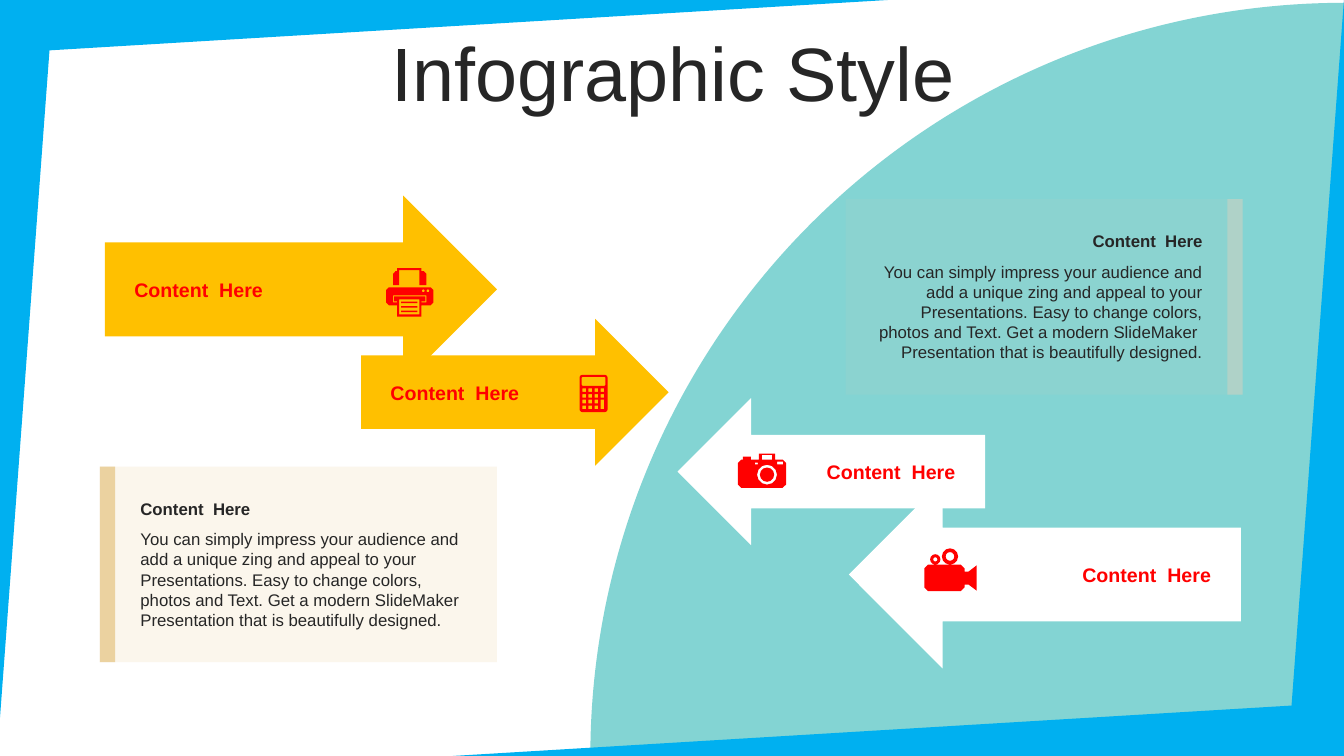
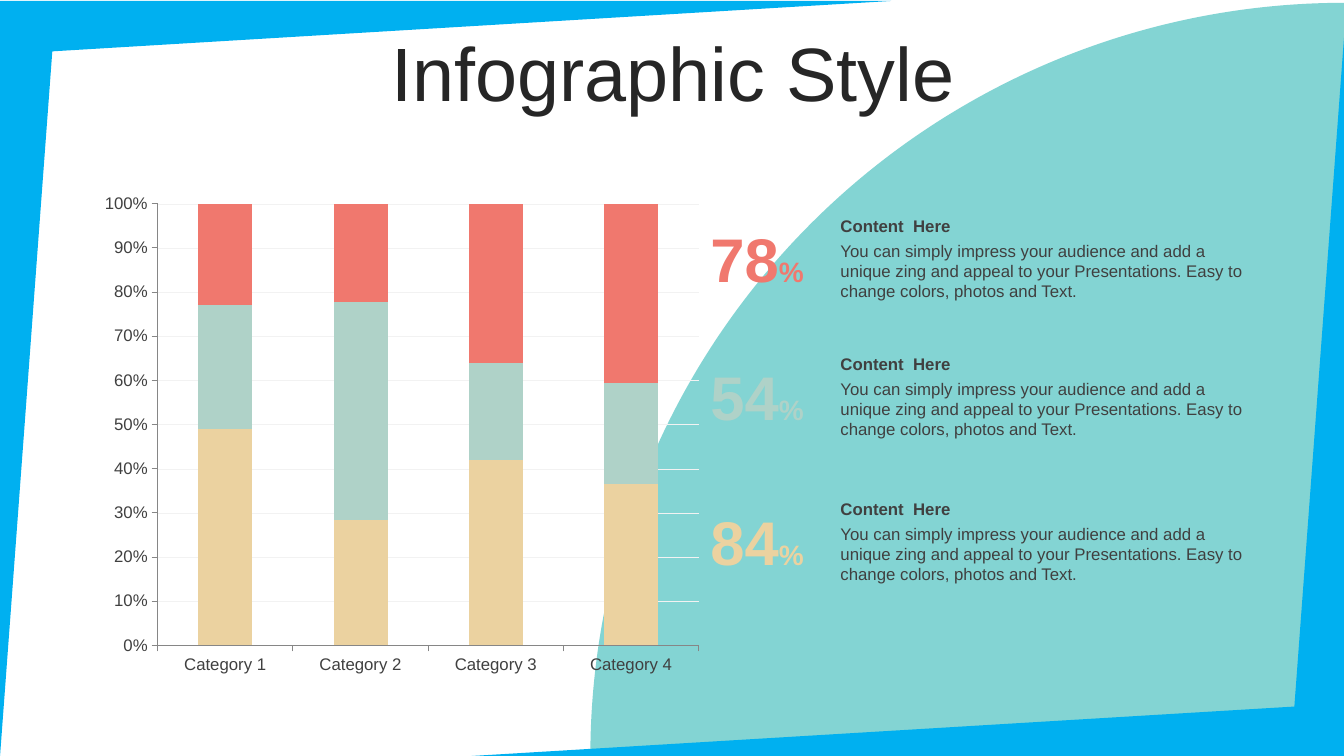
import math
from dataclasses import dataclass

from lxml import etree
from pptx import Presentation
from pptx.chart.data import CategoryChartData
from pptx.dml.color import RGBColor
from pptx.enum import chart as charts, shapes, text
from pptx.oxml.ns import qn
from pptx.util import Pt


@dataclass(frozen=True)
class Theme:
    font: str = "Arial"
    white: str = "FFFFFF"
    ink: str = "262626"
    grey: str = "404040"
    axis: str = "868686"
    grid: str = "F2F2F2"
    blue: str = "00B0F0"
    teal: str = "13ADAB"
    yellow: str = "FFC000"
    red: str = "FF0000"
    sand: str = "EBD2A0"
    mint: str = "AFD2C8"
    coral: str = "F0786E"
    title_size: int = 54
    figure_size: int = 44
    percent_size: int = 20
    label_size: int = 14
    body_size: int = 12


THEME = Theme()
MSO = shapes.MSO_SHAPE
LEFT, CENTER, RIGHT = text.PP_ALIGN.LEFT, text.PP_ALIGN.CENTER, text.PP_ALIGN.RIGHT
MIDDLE, TOP = text.MSO_ANCHOR.MIDDLE, text.MSO_ANCHOR.TOP


# Icon outlines: lists of points, where an outline inside another is a hole
def box(left, top, width, height):
    right, bottom = left + width, top + height
    return [(left, top), (right, top), (right, bottom), (left, bottom)]


def round_box(left, top, width, height, radius):
    centers = box(left + radius, top + radius, width - 2 * radius, height - 2 * radius)
    angles = [(corner, math.radians(180 + 90 * corner + step))
              for corner in range(4) for step in (0, 30, 60, 90)]
    return [(centers[corner][0] + radius * math.cos(angle),
             centers[corner][1] + radius * math.sin(angle)) for corner, angle in angles]


def disc(x, y, radius):
    return round_box(x - radius, y - radius, 2 * radius, 2 * radius, radius)


CALCULATOR = [round_box(0, 0, 20, 26.6, 2), round_box(1.5, 1.4, 17, 6.5, 1)] + [
    box(2.1 + 4.3 * column, 9.6 + 4.1 * row, 2.6, 6.7 if (column, row) == (3, 2) else 2.6)
    for column in range(4) for row in range(4) if (column, row) != (3, 3)]
PRINTER = [
    [(2, 13.7), (31.8, 13.7), (33.8, 15.7), (33.8, 24.6), (31.8, 26.6), (25.2, 26.6),
     (25.2, 34.6), (7.9, 34.6), (7.9, 26.6), (2, 26.6), (0, 24.6), (0, 15.7)],
    [(5, 19.4), (28.8, 19.4), (28.8, 24.5), (25.2, 24.5), (25.2, 23.8), (28.1, 23.8),
     (28.1, 20.2), (5.8, 20.2), (5.8, 23.8), (7.9, 23.8), (7.9, 24.5), (5, 24.5)],
    [(7.9, 0), (25.2, 0), (25.2, 2.2), (27, 2.2), (28.8, 4), (28.8, 12.2), (23.8, 12.2),
     (23.8, 1.4), (9.4, 1.4), (9.4, 12.2), (5, 12.2), (5, 4), (6.8, 2.2), (7.9, 2.2)],
    box(9.4, 22.3, 14.4, 10.8), disc(26.6, 16.2, 1), disc(29.9, 16.2, 1),
] + [box(10.8, top, 11.5, 1.1) for top in (24, 27.2, 30.4)]
CAMERA = [
    [(2.5, 4.3), (3.6, 4.3), (3.6, 2.2), (9.4, 2.2), (9.4, 4.3), (15.1, 4.3), (15.1, 0),
     (26.6, 0), (26.6, 4.3), (32, 4.3), (34.6, 6.8), (34.6, 22), (32, 24.5),
     (2.5, 24.5), (0, 22), (0, 6.8)],
    box(17.3, 0.9, 7.2, 3.4), box(12.2, 6.5, 2.2, 1.2), box(28.1, 5.8, 4.3, 2),
    disc(20.9, 15.1, 7.1), disc(20.9, 15.1, 5.1)]
VIDEO = [
    [(2.8, 11.6), (26, 11.6), (28.8, 14.4), (28.8, 16.6), (31.7, 16.6), (37.4, 12.2),
     (37.4, 30.2), (31.7, 25.9), (28.8, 25.9), (28.8, 27.8), (26, 30.6),
     (2.8, 30.6), (0, 27.8), (0, 14.4)],
    disc(18.4, 5.8, 5.8), disc(18.4, 5.8, 3.1), disc(7.9, 7.9, 3.7), disc(7.9, 7.9, 1.5)]

# Content
TITLE = "Infographic Style"
HEADING = "Content  Here"
PITCH = ("You can simply impress your audience and add a unique zing and appeal to your "
         "Presentations. Easy to change colors, photos and Text.")
LONG_PITCH = PITCH + " Get a modern SlideMaker  Presentation that is beautifully designed."

# Arrows: preset, colour, box, label left, label alignment, icon, icon corner
ARROWS = [
    (MSO.RIGHT_ARROW, THEME.yellow, (258, 227.7, 219.6, 105), 258, RIGHT, CALCULATOR, (414, 267.8)),
    (MSO.RIGHT_ARROW, THEME.yellow, (75, 139.7, 280, 134), 75, RIGHT, PRINTER, (275.8, 191.5)),
    (MSO.LEFT_ARROW, THEME.white, (484, 284.4, 219.6, 105), 583.4, LEFT, CAMERA, (527, 324)),
    (MSO.LEFT_ARROW, THEME.white, (606.3, 343.4, 280, 134), 766, LEFT, VIDEO, (660.2, 391.7)),
]
# Panels: left, top, bar left, colour, text left, text width, alignment
PANELS = [
    (71.3, 333.3, 71.3, THEME.sand, 93.2, 245.8, LEFT),
    (604, 142.3, 876.7, THEME.mint, 618.5, 247.7, RIGHT),
]
CATEGORIES = ["Category 1", "Category 2", "Category 3", "Category 4"]
SERIES = [
    ("Series 1", (49, 28, 42, 37), THEME.sand),
    ("Series 2", (28, 49, 22, 23), THEME.mint),
    ("Series 3", (23, 22, 36, 41), THEME.coral),
]
FIGURES = [("78", THEME.coral, 150.5), ("54", THEME.mint, 249), ("84", THEME.sand, 352.3)]


def color(value):
    return RGBColor.from_string(value)


def points(*values):
    return [Pt(value) for value in values]


def paint(shape, fill, opacity=100):
    shape.shadow.inherit = False
    shape.line.fill.background()
    shape.fill.solid()
    shape.fill.fore_color.rgb = color(fill)
    if opacity < 100:
        fill_color = shape.element.spPr.find(f"{qn('a:solidFill')}/{qn('a:srgbClr')}")
        etree.SubElement(fill_color, qn("a:alpha")).set("val", str(opacity * 1000))
    return shape


def add_preset(slide, preset, bounds, fill, opacity=100):
    return paint(slide.shapes.add_shape(preset, *points(*bounds)), fill, opacity)


def add_outlines(slide, outlines, corner, fill):
    builder = slide.shapes.build_freeform(*points(*outlines[0][0]))
    for number, outline in enumerate(outlines):
        if number:
            builder.move_to(*points(*outline[0]))
        builder.add_line_segments([points(*point) for point in outline[1:]], close=True)
    paint(builder.convert_to_shape(*points(*corner)), fill)


def style_font(font, size, fill, bold=False):
    font.name, font.size, font.bold = THEME.font, Pt(size), bold
    font.color.rgb = color(fill)


def write(frame, runs, fill, align=LEFT, bold=False, anchor=TOP):
    frame.word_wrap = True
    frame.vertical_anchor = anchor
    paragraph = frame.paragraphs[0]
    paragraph.alignment = align
    for content, size in runs:
        run = paragraph.add_run()
        run.text = content
        style_font(run.font, size, fill, bold)
    return paragraph


def add_text(slide, bounds, runs, fill, align=LEFT, bold=False, anchor=TOP):
    frame = slide.shapes.add_textbox(*points(*bounds)).text_frame
    write(frame, runs, fill, align, bold, anchor)


def add_title_slide(presentation):
    slide = presentation.slides.add_slide(presentation.slide_layouts[5])
    title = slide.shapes.title
    title.left, title.top, title.width, title.height = points(25, 26.6, 911.5, 57)
    paragraph = write(title.text_frame, [(TITLE, THEME.title_size)], THEME.ink, CENTER, anchor=MIDDLE)
    paragraph.line_spacing = 0.9
    add_preset(slide, MSO.PIE_WEDGE, (421.7, 2, 538.3, 538), THEME.teal, 52)
    return slide


def add_frame(slide, left, top):
    # The second wedge is the first one turned by half around the slide's middle
    wedge = [(0, 0), (0, 540), (37.4, 36), (636.5, 0)]
    turned = [(962 - x, 540 - y) for x, y in wedge]
    for outline in (wedge, turned):
        add_outlines(slide, [outline], (left, top), THEME.blue)


def build_arrows(presentation):
    slide = add_title_slide(presentation)
    for preset, fill, bounds, *_ in ARROWS:
        add_preset(slide, preset, bounds, fill)

    # Text panels with a bar on the outer side
    for left, top, bar_left, fill, text_left, width, align in PANELS:
        add_preset(slide, MSO.RECTANGLE, (left, top, 283.7, 139.7), fill, 20)
        add_preset(slide, MSO.RECTANGLE, (bar_left, top, 11, 139.7), fill)
        add_text(slide, (text_left, top + 19.2, width, 22), [(HEADING, THEME.body_size)],
                 THEME.ink, align, bold=True)
        add_text(slide, (text_left, top + 41, width, 80), [(LONG_PITCH, THEME.body_size)],
                 THEME.ink, align)

    # Arrow labels and icons
    for _, _, (_, top, _, height), label_left, align, icon, corner in ARROWS:
        add_text(slide, (label_left, top + height / 2 - 12, 120, 24),
                 [(HEADING, THEME.label_size)], THEME.red, align, bold=True, anchor=MIDDLE)
        add_outlines(slide, icon, corner, THEME.red)
    add_frame(slide, -2, 0)


def add_stacked_chart(slide):
    data = CategoryChartData()
    data.categories = CATEGORIES
    for name, values, _ in SERIES:
        data.add_series(name, values)
    chart = slide.shapes.add_chart(charts.XL_CHART_TYPE.COLUMN_STACKED_100,
                                   *points(66, 132, 442, 356), data).chart
    chart.has_legend = chart.has_title = False
    style_font(chart.font, THEME.body_size, THEME.grey)
    plot = chart.plots[0]
    plot.gap_width, plot.overlap, plot.vary_by_categories = 150, 100, False
    for series, (_, _, fill) in zip(plot.series, SERIES):
        series.format.fill.solid()
        series.format.fill.fore_color.rgb = color(fill)
    for axis in (chart.category_axis, chart.value_axis):
        style_font(axis.tick_labels.font, THEME.body_size, THEME.grey)
        axis.major_tick_mark = charts.XL_TICK_MARK.OUTSIDE
        axis.format.line.color.rgb = color(THEME.axis)
        axis.format.line.width = Pt(0.75)
    value_axis = chart.value_axis
    value_axis.tick_labels.number_format = "0%"
    value_axis.tick_labels.number_format_is_linked = False
    value_axis.has_major_gridlines = True
    value_axis.major_gridlines.format.line.color.rgb = color(THEME.grid)
    value_axis.major_gridlines.format.line.width = Pt(0.25)


def build_chart(presentation):
    slide = add_title_slide(presentation)
    add_stacked_chart(slide)

    # Key figures with their explanations
    for figure, fill, top in FIGURES:
        add_text(slide, (593.3, top, 307.4, 22), [(HEADING, THEME.body_size)],
                 THEME.grey, bold=True, anchor=MIDDLE)
        add_text(slide, (593.3, top + 18, 307.4, 51), [(PITCH, THEME.body_size)], THEME.grey)
        add_text(slide, (499, top + 3.6, 83.5, 60.5),
                 [(figure, THEME.figure_size), ("%", THEME.percent_size)],
                 fill, CENTER, bold=True, anchor=MIDDLE)
    add_frame(slide, 0, 0.7)


def main():
    presentation = Presentation()
    presentation.slide_width, presentation.slide_height = points(960, 540)
    build_arrows(presentation)
    build_chart(presentation)
    presentation.save("out.pptx")


if __name__ == "__main__":
    main()
